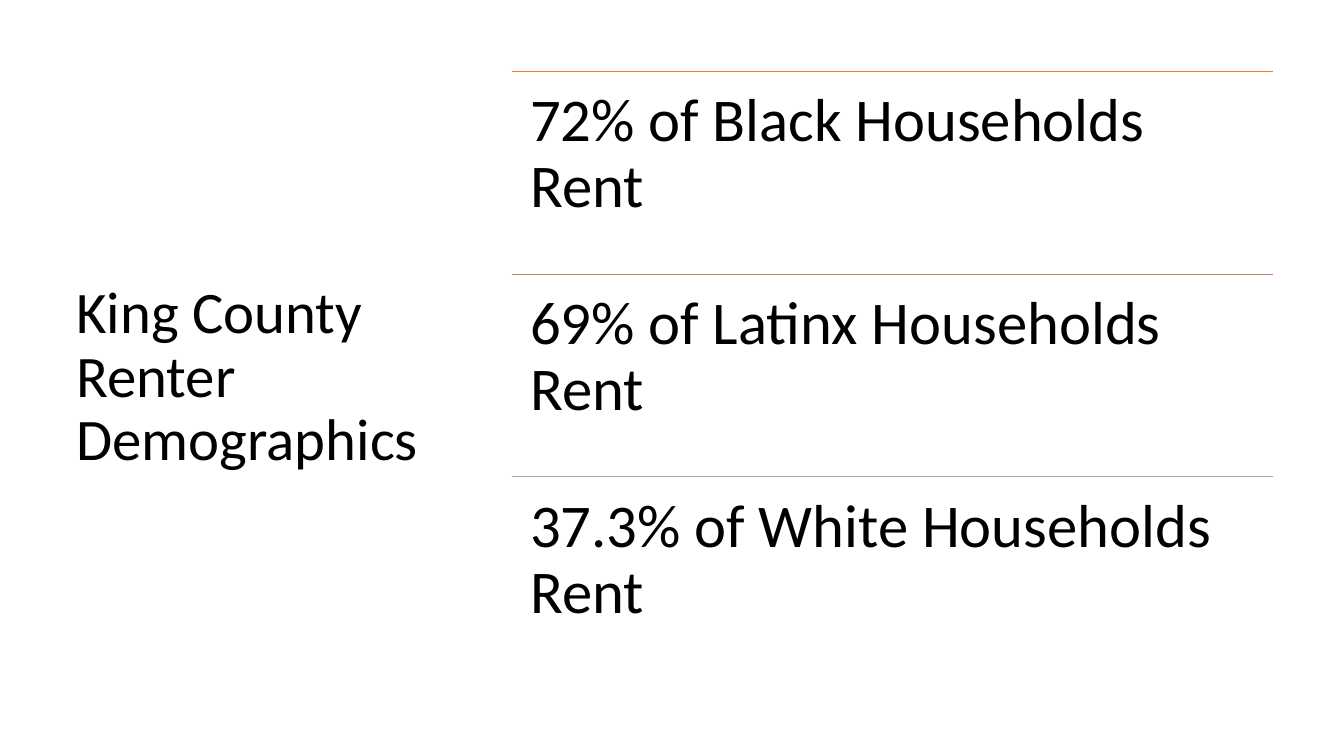
from pptx import Presentation
from pptx import util as u
from pptx.dml.color import RGBColor
from pptx.enum import shapes, text
from pptx.oxml.ns import qn
from lxml import etree

COLORS = {
    "text": "000000",
    "background": "FFFFFF",
    "orange": "ED7D31",
    "rose": "C48170",
    "gray": "A5A5A5",
}

HOUSEHOLDS = [
    ("72% of Black Households Rent", "orange"),
    ("69% of Latinx Households Rent", "rose"),
    ("37.3% of White Households Rent", "gray"),
]

LIST_LEFT, LIST_TOP = 19.35, 2.69
LIST_WIDTH, ROW_HEIGHT = 28.75, 7.67


def color(name):
    return RGBColor.from_string(COLORS[name])


def write_text(frame, content, size, font="Calibri", fill="text", spacing=0.9):
    paragraph = frame.paragraphs[0]
    paragraph.line_spacing = spacing
    run = paragraph.add_run()
    run.text = content
    run.font.name = font
    run.font.size = u.Pt(size)
    run.font.color.rgb = color(fill)


class SlideBuilder:
    def __init__(self, slide, line_width=1):
        self.slide = slide
        self.line_width = line_width

    def background(self, name):
        fill = self.slide.background.fill
        fill.solid()
        fill.fore_color.rgb = color(name)

    def text_box(self, content, left, top, width, height, size,
                 inset=(0.25, 0.13), anchor=text.MSO_ANCHOR.TOP):
        shape = self.slide.shapes.add_textbox(
            u.Cm(left), u.Cm(top), u.Cm(width), u.Cm(height))
        frame = shape.text_frame
        frame.word_wrap = True
        frame.vertical_anchor = anchor
        frame.margin_left = frame.margin_right = u.Cm(inset[0])
        frame.margin_top = frame.margin_bottom = u.Cm(inset[1])
        write_text(frame, content, size)

    def rule(self, left, top, width, name):
        connector = self.slide.shapes.add_connector(
            shapes.MSO_CONNECTOR.STRAIGHT,
            u.Cm(left), u.Cm(top), u.Cm(left + width), u.Cm(top))
        connector.line.color.rgb = color(name)
        connector.line.width = u.Pt(self.line_width)
        etree.SubElement(connector._element.spPr, qn("a:effectLst"))


def main():
    presentation = Presentation()
    presentation.slide_width = u.Cm(50.8)
    presentation.slide_height = u.Cm(28.58)
    slide = presentation.slides.add_slide(presentation.slide_layouts[6])
    builder = SlideBuilder(slide)

    builder.background("background")
    builder.text_box("King County Renter Demographics", 2.64, 2.67, 14.25, 23.27,
                     size=63, anchor=text.MSO_ANCHOR.MIDDLE)
    for row, (label, name) in enumerate(HOUSEHOLDS):
        top = LIST_TOP + row * ROW_HEIGHT
        builder.rule(LIST_LEFT, top, LIST_WIDTH, name)
        builder.text_box(label, LIST_LEFT, top, LIST_WIDTH, ROW_HEIGHT,
                         size=65, inset=(0.69, 0.69))

    presentation.save("out.pptx")


if __name__ == "__main__":
    main()
